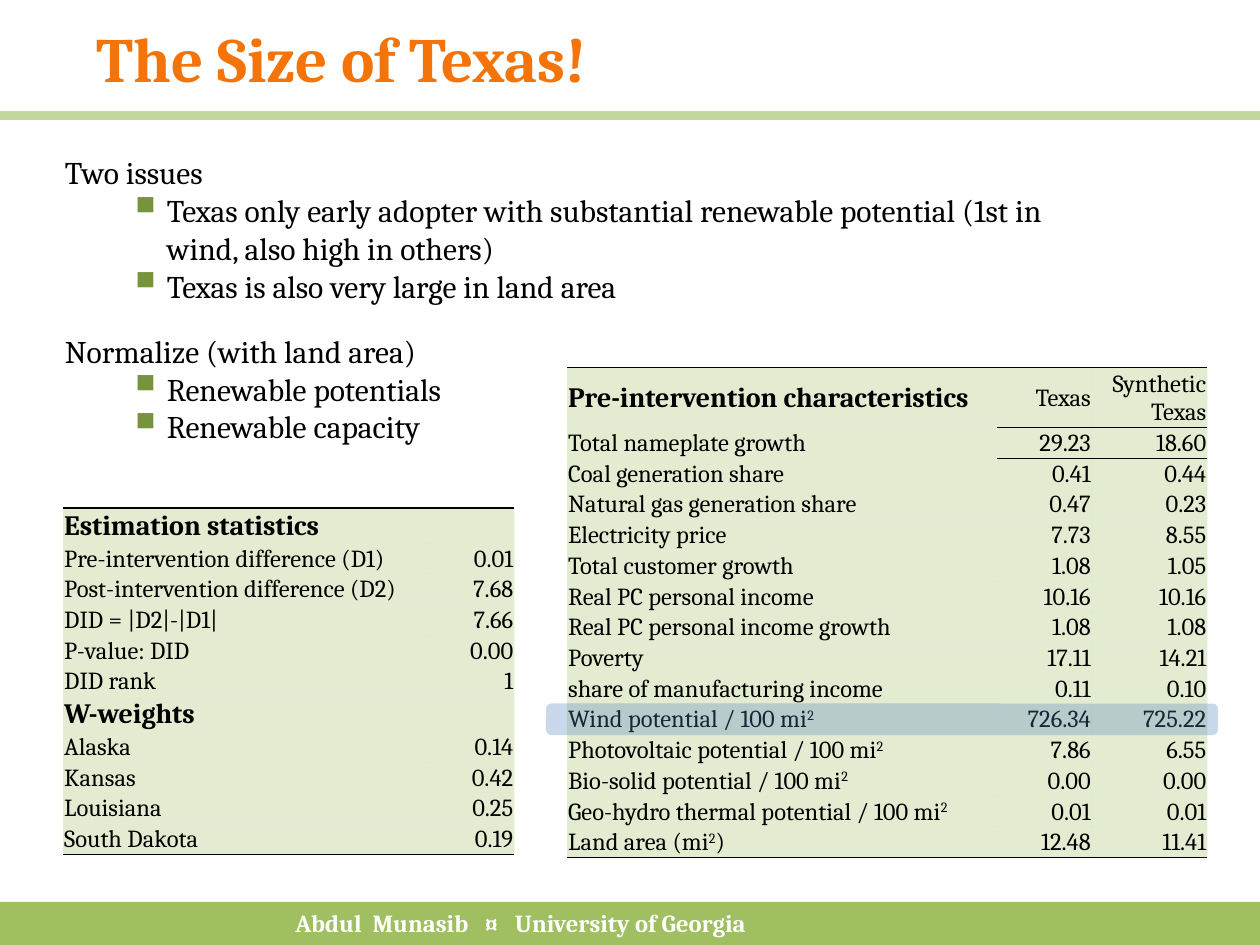
from dataclasses import dataclass

from lxml.etree import SubElement
from pptx import Presentation
from pptx.dml.color import RGBColor
from pptx.enum.shapes import MSO_CONNECTOR, MSO_SHAPE
from pptx.enum.text import MSO_ANCHOR, MSO_AUTO_SIZE, PP_ALIGN
from pptx.oxml import parse_xml
from pptx.oxml.ns import nsdecls, qn
from pptx.util import Inches, Pt


@dataclass(frozen=True)
class Theme:
    font: str = "Cambria"
    orange: str = "F4740A"
    rule: str = "C3D69B"
    band: str = "A0BF61"
    cell: str = "B9D08C"
    bullet: str = "77933C"
    highlight: str = "4F81BD"
    black: str = "000000"
    white: str = "FFFFFF"
    title_size: int = 36
    body_size: int = 18
    heading_size: int = 16
    small_size: int = 14
    no_table_style: str = "{2D5ABB26-0587-4C30-8999-92F81FD0307C}"


def set_all(target, values):
    for name, value in values.items():
        setattr(target, name, value)


def grid(units):
    """Twelve grid columns or rows make one inch."""
    return Inches(units / 12)


class SlideBuilder:
    def __init__(self, slide, theme):
        self.slide = slide
        self.theme = theme

    def add_text(self, paragraph, text, size, color, bold=False):
        """Add text; the character after each ^ is raised."""
        first, *raised = text.split("^")
        pieces = [(first, False)]
        for part in raised:
            pieces += [(part[0], True), (part[1:], False)]
        for piece, superscript in pieces:
            if not piece:
                continue
            run = paragraph.add_run()
            run.text = piece
            set_all(run.font, {"name": self.theme.font, "size": Pt(size), "bold": bold})
            run.font.color.rgb = RGBColor.from_string(color)
            if superscript:
                run.font._element.set("baseline", "30000")

    def paint(self, fill, element, color, opacity=100):
        fill.solid()
        fill.fore_color.rgb = RGBColor.from_string(color)
        if opacity < 100:
            fill_element = next(element.iter(qn("a:solidFill")), None) \
                if element.tag != qn("a:tcPr") else element.find(qn("a:solidFill"))
            SubElement(fill_element[0], qn("a:alpha"), val=str(opacity * 1000))

    def title(self, text, *box):
        shape = self.slide.shapes.add_textbox(*map(grid, box))
        set_all(shape.text_frame, {"word_wrap": True, "vertical_anchor": MSO_ANCHOR.MIDDLE})
        self.add_text(shape.text_frame.paragraphs[0], text,
                      self.theme.title_size, self.theme.orange, True)

    def rule(self, row, width):
        line = self.slide.shapes.add_connector(
            MSO_CONNECTOR.STRAIGHT, 0, grid(row), grid(120), grid(row))
        line.line.color.rgb = RGBColor.from_string(self.theme.rule)
        line.line.width = Pt(width)
        SubElement(line._element.spPr, qn("a:effectLst"))

    def bullets(self, heading, items, *box):
        shape = self.slide.shapes.add_textbox(*map(grid, box))
        frame = shape.text_frame
        set_all(frame, {"word_wrap": True, "auto_size": MSO_AUTO_SIZE.SHAPE_TO_FIT_TEXT})
        self.add_text(frame.paragraphs[0], heading, self.theme.body_size, self.theme.black)
        for item in items:
            paragraph = frame.add_paragraph()
            paragraph.level = 1
            properties = paragraph._p.get_or_add_pPr()
            properties.set("marL", str(Inches(0.81)))
            properties.set("indent", str(-Inches(0.31)))
            color = SubElement(properties, qn("a:buClr"))
            SubElement(color, qn("a:srgbClr"), val=self.theme.bullet)
            SubElement(properties, qn("a:buSzPct"), val="150000")
            SubElement(properties, qn("a:buChar"), char="▪")
            self.add_text(paragraph, item, self.theme.body_size, self.theme.black)

    def shape(self, kind, color, *box, opacity=100):
        shape = self.slide.shapes.add_shape(kind, *map(grid, box))
        shape.shadow.inherit = False
        self.paint(shape.fill, shape._element, color, opacity)
        shape.line.fill.background()
        return shape

    def footer(self, text, *box):
        shape = self.shape(MSO_SHAPE.RECTANGLE, self.theme.band, *box)
        set_all(shape.text_frame, {"word_wrap": True, "margin_right": Inches(1.83),
                                   "vertical_anchor": MSO_ANCHOR.TOP})
        paragraph = shape.text_frame.paragraphs[0]
        paragraph.alignment = PP_ALIGN.CENTER
        self.add_text(paragraph, text, self.theme.small_size, self.theme.white, True)

    def table(self, rows, headings, left, top, widths, heights, header_rule=False):
        frame = self.slide.shapes.add_table(
            len(rows), len(widths), grid(left), grid(top),
            grid(sum(widths)), Inches(sum(heights)))
        table = frame.table
        set_all(table, {"first_row": False, "horz_banding": False})
        table._tbl.tblPr.find(qn("a:tableStyleId")).text = self.theme.no_table_style
        for column, width in zip(table.columns, widths):
            column.width = grid(width)
        last = len(rows) - 1
        for i, values in enumerate(rows):
            table.rows[i].height = Inches(heights[i])
            for j, text in enumerate(values):
                sides = {"T": i == 0 or (header_rule and i == 1 and j > 0),
                         "B": i == last or (header_rule and i == 0 and j > 0)}
                self.cell(table.cell(i, j), text, text in headings, j > 0,
                          [side for side, drawn in sides.items() if drawn])

    def cell(self, cell, text, heading, numeric, borders):
        set_all(cell, {"margin_left": Inches(0.01), "margin_right": Inches(0.01),
                       "margin_top": Inches(0.01), "margin_bottom": 0,
                       "vertical_anchor": MSO_ANCHOR.MIDDLE})
        paragraph = cell.text_frame.paragraphs[0]
        paragraph.alignment = PP_ALIGN.RIGHT if numeric else PP_ALIGN.LEFT
        size = self.theme.heading_size if heading else self.theme.small_size
        if text:
            self.add_text(paragraph, text, size, self.theme.black, heading)
        else:
            SubElement(paragraph._p, qn("a:endParaRPr"), sz=str(size * 100))
        properties = cell._tc.get_or_add_tcPr()
        self.paint(cell.fill, properties, self.theme.cell, 40)
        for position, side in enumerate(borders):
            properties.insert(position, parse_xml(
                f'<a:ln{side} {nsdecls("a")} w="12700"><a:solidFill>'
                f'<a:srgbClr val="{self.theme.black}"/></a:solidFill></a:ln{side}>'))


def main():
    presentation = Presentation()
    set_all(presentation, {"slide_width": Inches(10), "slide_height": Inches(7.5)})
    theme = Theme()
    builder = SlideBuilder(
        presentation.slides.add_slide(presentation.slide_layouts[6]), theme)

    # Title and rule
    builder.title("The Size of Texas!", 8, 0, 105, 11)
    builder.rule(11, 5)

    # Estimation table
    estimates = [
        ("Estimation statistics", ""), ("Pre-intervention difference (D1)", "0.01"),
        ("Post-intervention difference (D2)", "7.68"), ("DID = |D2|-|D1|", "7.66"),
        ("P-value: DID", "0.00"), ("DID rank", "1"), ("W-weights", ""),
        ("Alaska", "0.14"), ("Kansas", "0.42"), ("Louisiana", "0.25"),
        ("South Dakota", "0.19")]
    builder.table(estimates, {"Estimation statistics", "W-weights"}, 6, 48.4,
                  (35, 8), [0.2] * len(estimates))

    # Characteristics table
    characteristics = [
        ("Pre-intervention characteristics", "Texas", "Synthetic Texas"),
        ("Total nameplate growth", "29.23", "18.60"),
        ("Coal generation share", "0.41", "0.44"),
        ("Natural gas generation share", "0.47", "0.23"),
        ("Electricity price", "7.73", "8.55"),
        ("Total customer growth", "1.08", "1.05"),
        ("Real PC personal income", "10.16", "10.16"),
        ("Real PC personal income growth", "1.08", "1.08"),
        ("Poverty", "17.11", "14.21"),
        ("share of manufacturing income", "0.11", "0.10"),
        ("Wind potential / 100 mi^2", "726.34", "725.22"),
        ("Photovoltaic potential / 100 mi^2", "7.86", "6.55"),
        ("Bio-solid potential / 100 mi^2", "0.00", "0.00"),
        ("Geo-hydro thermal potential / 100 mi^2", "0.01", "0.01"),
        ("Land area (mi^2)", "12.48", "11.41")]
    builder.table(characteristics, {"Pre-intervention characteristics"}, 54, 35,
                  (41, 9, 11), [0.37] + [0.2] * (len(characteristics) - 1), header_rule=True)

    # Bullet lists
    builder.bullets("Two issues", [
        "Texas only early adopter with substantial renewable potential "
        "(1st in wind, also high in others)",
        "Texas is also very large in land area"], 5, 14, 100, 15.7)
    builder.bullets("Normalize (with land area)",
                    ["Renewable potentials", "Renewable capacity"], 5, 31, 43, 12.1)

    # Row highlight and footer
    builder.shape(MSO_SHAPE.ROUNDED_RECTANGLE, theme.highlight, 52, 67, 64, 3, opacity=30)
    builder.footer("Abdul  Munasib   ¤   University of Georgia", 0, 85.9, 120, 4.1)

    presentation.save("out.pptx")


if __name__ == "__main__":
    main()
